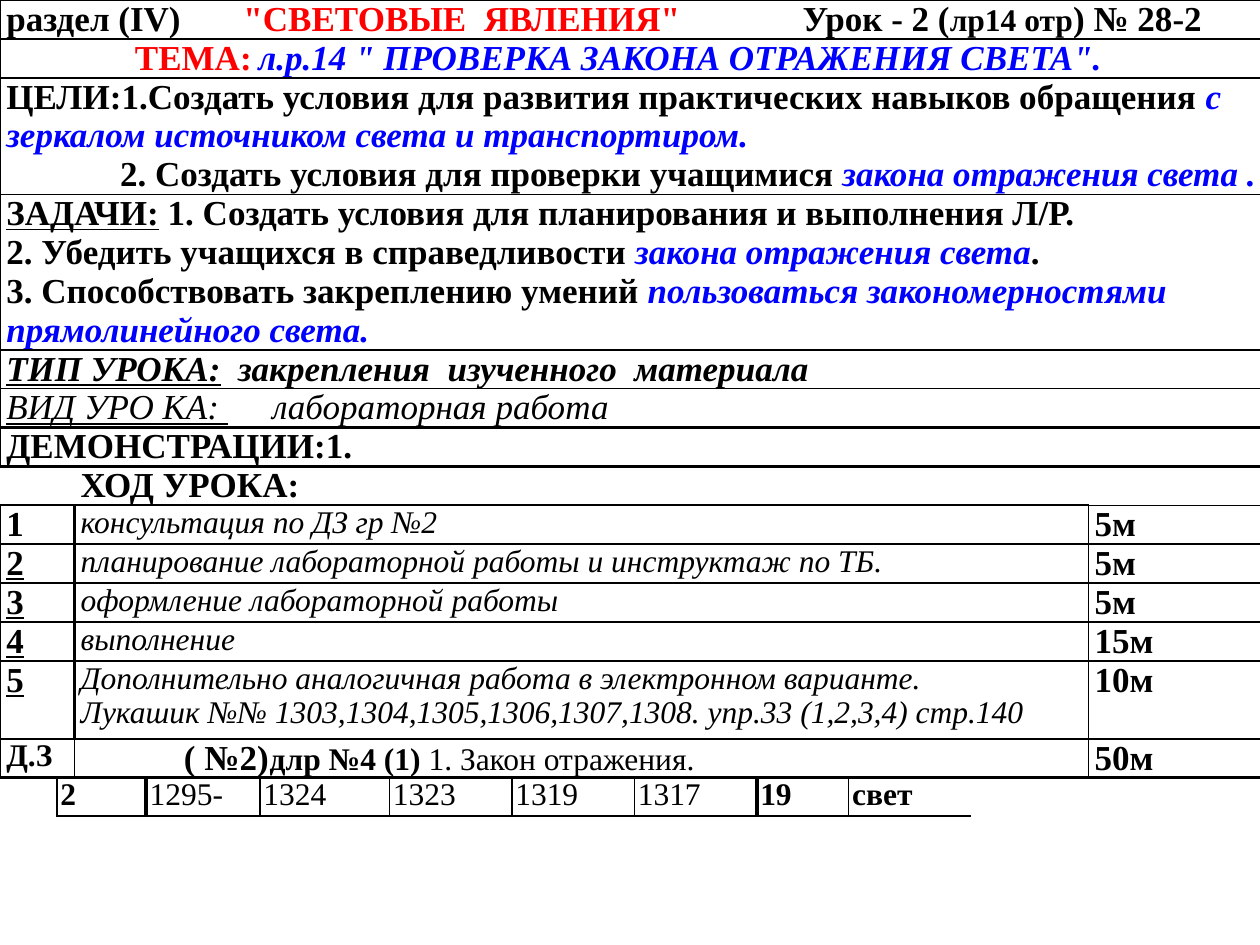
from lxml.etree import SubElement
from pptx import Presentation
from pptx.dml.color import RGBColor as RGB
from pptx.oxml.ns import qn
from pptx.util import Pt

"""Lesson plan slide: one table with goals, stages and homework."""

BLACK, RED, BLUE = "000000", "FF0000", "0000FF"
FORMATS = {
    "": {},
    "b": {"bold": True},
    "i": {"italic": True},
    "bi": {"bold": True, "italic": True},
    "bu": {"bold": True, "underline": True},
    "iu": {"italic": True, "underline": True},
    "biu": {"bold": True, "italic": True, "underline": True},
}


def color(value):
    return RGB.from_string(value)


def add_border(tcPr, side, width):
    ln = SubElement(tcPr, qn("a:ln" + side), w=str(Pt(width)))
    if width:
        fill = SubElement(ln, qn("a:solidFill"))
        SubElement(fill, qn("a:srgbClr"), val=BLACK)
    else:
        SubElement(ln, qn("a:noFill"))


WIDTHS = [32.5, 10, 41, 65, 74, 70, 70, 70, 52.5, 70, 34.5, 32.5, 100]
HEIGHTS = [19.5, 19.5, 49, 68.5] + [10] * 5 + [18, 10, 10, 44.5, 18, 16.5]
LAST = len(WIDTHS) - 1

headings = [
    ([[("b", 20, BLACK, "раздел (IV)\t"),
       ("b", 20, RED, "\"СВЕТОВЫЕ  ЯВЛЕНИЯ\""),
       ("b", 20, BLACK, "\tУрок - 2 ("),
       ("b", 18, BLACK, "лр14 отр"),
       ("b", 20, BLACK, ") № 28-2")]], (1, 1, 1, 1.5)),
    ([[("b", 20, RED, "ТЕМА:\t"),
       ("bi", 20, BLUE, "л.р.14 \" ПРОВЕРКА ЗАКОНА ОТРАЖЕНИЯ СВЕТА\".")]],
     (1.5, 1.5, 1.5, 1.5)),
    ([[("b", 20, BLACK, "ЦЕЛИ:1.Создать условия для развития практических навыков обращения "),
       ("bi", 20, BLUE, "с зеркалом источником света и транспортиром.")],
      [("b", 20, BLACK, "2. Создать условия для проверки учащимися "),
       ("bi", 20, BLUE, "закона отражения света .")]], (1, 1.5, 1, 1)),
    ([[("bu", 20, BLACK, "ЗАДАЧИ:"),
       ("b", 20, BLACK, " 1. Создать условия для планирования и выполнения Л/Р.")],
      [("b", 20, BLACK, "2. Убедить учащихся в справедливости "),
       ("bi", 20, BLUE, "закона отражения света"),
       ("b", 20, BLACK, ".")],
      [("b", 20, BLACK, "3. Способствовать закреплению умений "),
       ("bi", 20, BLUE, "пользоваться закономерностями прямолинейного света.")]],
     (1, 1, 1, 1)),
    ([[("biu", 20, BLACK, "ТИП УРОКА:"),
       ("bi", 20, BLACK, "  закрепления  изученного  материала")]], (1, 1, 1, 1)),
    ([[("iu", 20, BLACK, "ВИД УРО КА: "),
       ("i", 20, BLACK, "\tлабораторная работа")]], (1, 1, 1, 1.5)),
    ([[("b", 20, BLACK, "ДЕМОНСТРАЦИИ:1.")]], (1.5, 1.5, 1.5, 1.5)),
]
stages = [
    (["консультация по ДЗ гр №2"], "5м"),
    (["планирование лабораторной работы и инструктаж по ТБ."], "5м"),
    (["оформление лабораторной работы"], "5м"),
    (["выполнение"], "15м"),
    (["Дополнительно аналогичная работа в электронном варианте.",
      "Лукашик №№ 1303,1304,1305,1306,1307,1308. упр.33 (1,2,3,4) стр.140"], "10м"),
]
homework = [("b", 20, BLACK, "( №2)\t"), ("b", 18, BLACK, "длр №4 (1)"),
            ("", 18, BLACK, " 1. Закон отражения.")]
indents = {(1, 0, 0): 73.5, (2, 0, 1): 65, (13, 2, 0): 59}
tabs = {(0, 0, 0): [135.5, 455], (1, 0, 0): [160.5],
        (5, 0, 0): [152], (13, 2, 0): [272]}

cells = [(row, 0, LAST, paragraphs, edges)
         for row, (paragraphs, edges) in enumerate(headings)]
cells += [(7, 0, 1, [], (0, 1.5, 0, 1.5)),
          (7, 2, 11, [[("b", 20, BLACK, "ХОД УРОКА:")]], (0, 1.5, 0, 1.5)),
          (7, LAST, LAST, [], (0, 1.5, 0, 1))]
for number, (lines, minutes) in enumerate(stages, 1):
    row = 7 + number
    top = 1.5 if number == 1 else 1
    bottom = 1.5 if number == len(stages) else 1
    style = "b" if number == 1 else "bu"
    cells += [
        (row, 0, 1, [[(style, 20, BLACK, str(number))]], (1.5, top, 1.5, bottom)),
        (row, 2, 11, [[("i", 18, BLACK, line)] for line in lines], (1.5, top, 1, bottom)),
        (row, LAST, LAST, [[("b", 20, BLACK, minutes)]], (1, 1, 1, bottom)),
    ]
cells += [(13, 0, 1, [[("b", 18, BLACK, "Д.З")]], (1.5, 1.5, 1, 1.5)),
          (13, 2, 11, [homework], (1, 1.5, 1, 1.5)),
          (13, LAST, LAST, [[("b", 20, BLACK, "50м")]], (1, 1.5, 1.5, 1.5)),
          (14, 0, 0, [], (0, 1.5, 1, 0)),
          (14, 1, 2, [[("b", 18, BLACK, "2")]], (1, 1.5, 2.25, 1))]
for col, text in enumerate(["1295-", "1324", "1323", "1319", "1317", "19", "свет"], 3):
    left = 2.25 if col in (3, 8) else 1
    right = {7: 2.25, 9: 0}.get(col, 1)
    style = "b" if col > 7 else ""
    cells.append((14, col, col, [[(style, 18, BLACK, text)]], (left, 1.5, right, 1)))
cells += [(14, 10, 10, [], (0, 1.5, 0, 0)), (14, 11, LAST, [], (0, 1.5, 0, 0))]

prs = Presentation()
prs.slide_width, prs.slide_height = Pt(720), Pt(540)
s = prs.slides.add_slide(prs.slide_layouts[6])
frame = s.shapes.add_table(len(HEIGHTS), len(WIDTHS), 0, 0, Pt(720), Pt(498))
table = frame.table
table.first_row = table.horz_banding = False
for column, width in zip(table.columns, WIDTHS):
    column.width = Pt(width)
for table_row, height in zip(table.rows, HEIGHTS):
    table_row.height = Pt(height)
frame.width, frame.height = Pt(720), Pt(498)

for row, first, last, paragraphs, edges in cells:
    cell = table.cell(row, first)
    if last > first:
        cell.merge(table.cell(row, last))
    for col in range(first, last + 1):
        part = table.cell(row, col)
        part.margin_left = part.margin_right = Pt(2 if row == 14 else 3.6)
        part.margin_top = part.margin_bottom = 0
        tcPr = part._tc.get_or_add_tcPr()
        for side, width in zip("LRTB", (edges[0], edges[2], edges[1], edges[3])):
            add_border(tcPr, side, width)
        part.fill.background()
    tf = cell.text_frame
    for index, runs in enumerate(paragraphs):
        p = tf.add_paragraph() if index else tf.paragraphs[0]
        key = (row, first, index)
        pPr = p._p.get_or_add_pPr()
        if key in indents:
            pPr.set("marL", "0")
            pPr.set("indent", str(Pt(indents[key])))
        if key in tabs:
            stops = SubElement(pPr, qn("a:tabLst"))
            for stop in tabs[key]:
                SubElement(stops, qn("a:tab"), pos=str(Pt(stop)), algn="l")
        for style, size, hue, text in runs:
            r = p.add_run()
            r.text = text
            values = {"name": "Times New Roman", "size": Pt(size), **FORMATS[style]}
            for name, value in values.items():
                setattr(r.font, name, value)
            r.font.color.rgb = color(hue)

prs.save("out.pptx")
